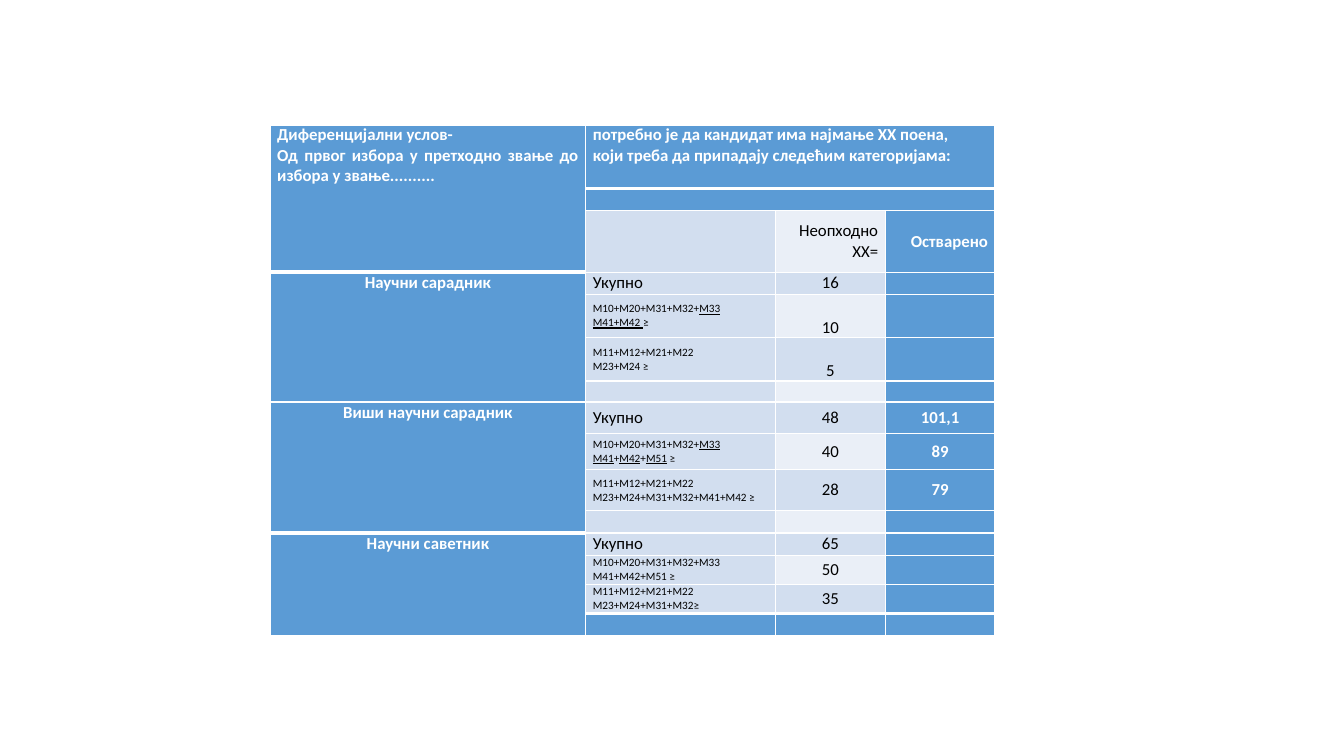
from pptx import Presentation
from pptx.dml.color import RGBColor
from pptx.enum.text import MSO_ANCHOR, PP_ALIGN
from pptx.oxml.ns import qn
from pptx.util import Inches, Pt
from lxml import etree

TOP, MIDDLE, BOTTOM = MSO_ANCHOR.TOP, MSO_ANCHOR.MIDDLE, MSO_ANCHOR.BOTTOM
LEFT, CENTER = PP_ALIGN.LEFT, PP_ALIGN.CENTER
RIGHT, JUSTIFY = PP_ALIGN.RIGHT, PP_ALIGN.JUSTIFY
BLUE = RGBColor(0x5B, 0x9B, 0xD5)
LIGHT = RGBColor(0xD2, 0xDE, 0xEF)
PALE = RGBColor(0xEA, 0xEF, 0xF7)
WHITE = RGBColor(0xFF, 0xFF, 0xFF)
BLACK = RGBColor(0, 0, 0)

WIDTHS = [3.13, 1.88, 1.09, 1.09]
HEIGHTS = [0.63, 0.22, 0.61, 0.22, 0.43, 0.43, 0.21, 0.31,
           0.36, 0.41, 0.22, 0.22, 0.29, 0.29, 0.22]
ROWS = [
    ["Диференцијални услов-\nОд првог избора у претходно звање до избора у звање..........",
     "потребно је да кандидат има најмање ХХ поена,\nкоји треба да припадају следећим категоријама:", "", ""],
    ["", "", "", ""],
    ["", "", "Неопходно\nXX=", "Остварено"],
    ["Научни сарадник", "Укупно", "16", ""],
    ["", "М10+М20+М31+М32+_М33\n_М41+М42 _≥", "10", ""],
    ["", "М11+М12+М21+М22\nМ23+М24 ≥", "5", ""],
    ["", "", "", ""],
    ["Виши научни сарадник", "Укупно", "48", "101,1"],
    ["", "М10+М20+М31+М32+_М33\n_М41_+_М42_+_М51_ ≥", "40", "89"],
    ["", "М11+М12+М21+М22\nМ23+М24+М31+М32+М41+М42 ≥", "28", "79"],
    ["", "", "", ""],
    ["Научни саветник", "Укупно", "65", ""],
    ["", "М10+М20+М31+М32+М33\nМ41+М42+М51 ≥", "50", ""],
    ["", "М11+М12+М21+М22\nМ23+М24+М31+М32≥", "35", ""],
    ["", "", "", ""],
]
MERGES = [(0, 0, 2, 0), (0, 1, 0, 3), (1, 1, 1, 3),
          (3, 0, 6, 0), (7, 0, 10, 0), (11, 0, 14, 0)]
THICK = {(3, 0), (11, 0)} | {(row, col) for row in (1, 14) for col in (1, 2, 3)}


def add_edge(cell, side, width):
    props = cell._tc.get_or_add_tcPr()
    line = etree.SubElement(props, qn("a:" + side), w=str(Pt(width)))
    fill = etree.SubElement(line, qn("a:solidFill"))
    etree.SubElement(fill, qn("a:srgbClr"), val=str(WHITE))


def fill_text(cell, text, size, color, align):
    frame = cell.text_frame
    for num, line in enumerate(text.split("\n")):
        para = frame.add_paragraph() if num else frame.paragraphs[0]
        para.alignment = align
        for part, piece in enumerate(line.split("_")):
            if piece:
                run = para.add_run()
                run.text = piece
                font = run.font
                font.name = "Calibri"
                font.size = Pt(size)
                font.bold = color == WHITE
                font.color.rgb = color
                if part % 2:
                    font.underline = True
        if not line:
            etree.SubElement(para._p, qn("a:endParaRPr"), sz=str(size * 100))


deck = Presentation()
deck.slide_width = Inches(13.33)
deck.slide_height = Inches(7.5)
slide = deck.slides.add_slide(deck.slide_layouts[6])
frame = slide.shapes.add_table(
    len(HEIGHTS), len(WIDTHS), Inches(2.68), Inches(1.24),
    Inches(sum(WIDTHS)), Inches(sum(HEIGHTS)))
table = frame.table
table.first_row = False
table.horz_banding = False
for col, width in enumerate(WIDTHS):
    table.columns[col].width = Inches(width)
for row, height in enumerate(HEIGHTS):
    table.rows[row].height = Inches(height)
for top, left, low, right in MERGES:
    table.cell(top, left).merge(table.cell(low, right))

for row, items in enumerate(ROWS):
    for col, text in enumerate(items):
        cell = table.cell(row, col)
        cell.margin_left = cell.margin_right = Inches(0.07)
        cell.margin_top = cell.margin_bottom = 0
        end = row + (cell.span_height if cell.is_merge_origin else 1)
        add_edge(cell, "lnL", 1)
        add_edge(cell, "lnR", 1)
        add_edge(cell, "lnT", 3 if (row, col) in THICK else 1)
        add_edge(cell, "lnB", 3 if (end, col) in THICK else 1)

        if row in (0, 1, 14) or col in (0, 3):
            shade = BLUE
        elif col == 2 and row % 2 == 0:
            shade = PALE
        else:
            shade = LIGHT
        cell.fill.solid()
        cell.fill.fore_color.rgb = shade

        if row == 0 or col == 0:
            cell.vertical_anchor = TOP
        elif row in (4, 5) and col == 2:
            cell.vertical_anchor = BOTTOM
        else:
            cell.vertical_anchor = MIDDLE

        if row == 0:
            align = JUSTIFY
        elif row == 2:
            align = RIGHT
        else:
            align = LEFT if col == 1 else CENTER
        size = 8 if text.startswith("М1") else 12
        fill_text(cell, text, size, WHITE if shade == BLUE else BLACK, align)

deck.save("out.pptx")
